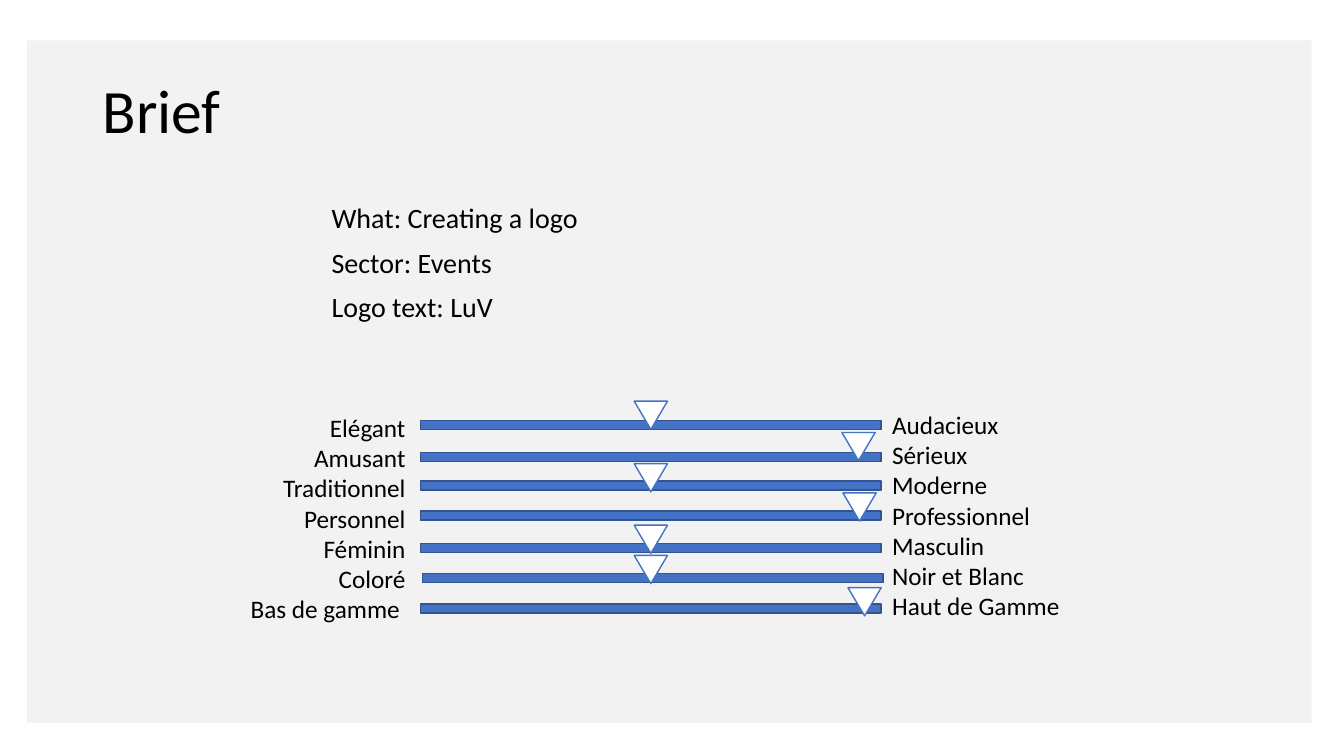
import pptx
import pptx.dml.color
import pptx.enum.shapes
import pptx.enum.text
import pptx.util

Inches = pptx.util.Inches
Pt = pptx.util.Pt
SHAPE = pptx.enum.shapes.MSO_SHAPE
ALIGN = pptx.enum.text.PP_ALIGN
ANCHOR = pptx.enum.text.MSO_ANCHOR

COLOURS = {
    "panel": "F2F2F2",
    "text": "000000",
    "bar": "4472C4",
    "bar_edge": "325491",
    "marker": "FFFFFF",
}

BRIEF = ["What: Creating a logo", "Sector: Events", "Logo text: LuV"]

# left label, right label, bar left, bar top, marker left, marker top
SCALES = [
    ("Elégant", "Audacieux", 4.17, 4.17, 6.29, 3.98),
    ("Amusant", "Sérieux", 4.17, 4.49, 8.35, 4.29),
    ("Traditionnel", "Moderne", 4.17, 4.77, 6.29, 4.6),
    ("Personnel", "Professionnel", 4.17, 5.07, 8.36, 4.89),
    ("Féminin", "Masculin", 4.17, 5.39, 6.29, 5.21),
    ("Coloré", "Noir et Blanc", 4.19, 5.69, 6.29, 5.51),
    ("Bas de gamme ", "Haut de Gamme", 4.17, 5.99, 8.41, 5.83),
]


def colour(name):
    return pptx.dml.color.RGBColor.from_string(COLOURS[name])


def add_text(page, lines, left, top, width, height, *, size=18, align=ALIGN.LEFT,
             anchor=ANCHOR.TOP, line_spacing=1.0, space_before=0, margin_top=0.05):
    """Add a text box with one paragraph for each line."""
    box = page.shapes.add_textbox(Inches(left), Inches(top), Inches(width), Inches(height))
    frame = box.text_frame
    frame.word_wrap = True
    frame.vertical_anchor = anchor
    frame.margin_top = Inches(margin_top)
    for index, line in enumerate(lines):
        para = frame.add_paragraph() if index else frame.paragraphs[0]
        para.alignment = align
        para.line_spacing = line_spacing
        para.space_before = Pt(space_before)
        span = para.add_run()
        span.text = line
        span.font.name = "Calibri"
        span.font.size = Pt(size)
        span.font.color.rgb = colour("text")


def add_block(page, kind, left, top, width, height, fill, edge=None):
    """Add a filled shape, outlined when an edge colour is named."""
    block = page.shapes.add_shape(kind, Inches(left), Inches(top), Inches(width), Inches(height))
    block.shadow.inherit = False
    block.fill.solid()
    block.fill.fore_color.rgb = colour(fill)
    if edge:
        block.line.color.rgb = colour(edge)
        block.line.width = Pt(1)
    else:
        block.line.fill.background()
    return block


def add_scales(page):
    left_labels, right_labels = zip(*(scale[:2] for scale in SCALES))
    add_text(page, left_labels, 0.92, 4.04, 3.2, 2.22, align=ALIGN.RIGHT)
    add_text(page, right_labels, 8.75, 4.01, 3.2, 2.22)
    for _, _, left, top, _, _ in SCALES:
        add_block(page, SHAPE.RECTANGLE, left, top, 4.57, 0.09, "bar", "bar_edge")
    for _, _, _, _, left, top in SCALES:
        marker = add_block(page, SHAPE.ISOSCELES_TRIANGLE, left, top, 0.33, 0.28, "marker", "bar")
        marker.rotation = 180


def main():
    deck = pptx.Presentation()
    deck.slide_width = Inches(13.33)
    deck.slide_height = Inches(7.5)
    page = deck.slides.add_slide(deck.slide_layouts[6])
    add_block(page, SHAPE.RECTANGLE, 0.27, 0.4, 12.74, 6.77, "panel")
    add_text(page, ["Brief"], 0.92, 0.4, 11.5, 1.45, size=44, anchor=ANCHOR.MIDDLE,
             line_spacing=0.9)
    add_text(page, BRIEF, 3.19, 1.4, 7.16, 2.13, size=20, anchor=ANCHOR.MIDDLE,
             line_spacing=0.9, space_before=10, margin_top=0.36)
    add_scales(page)
    deck.save("out.pptx")


if __name__ == "__main__":
    main()
